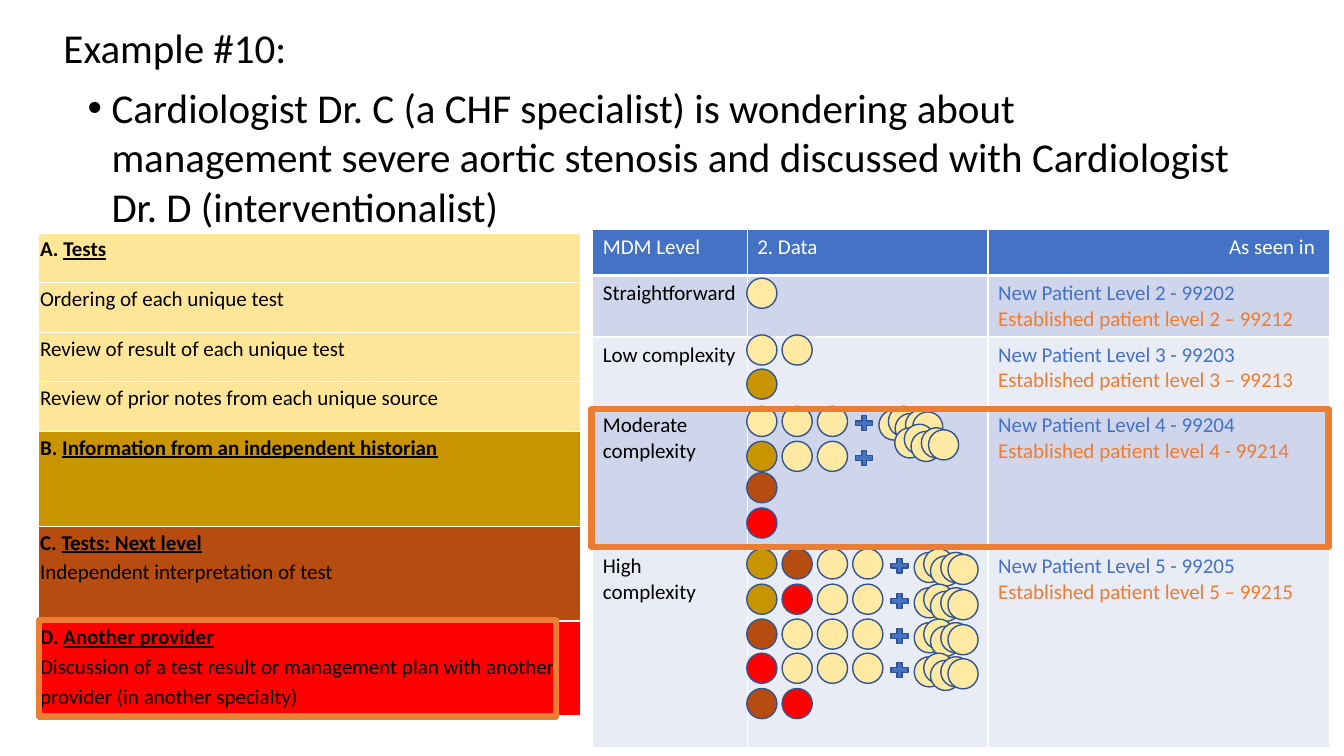
from dataclasses import dataclass

from lxml.etree import SubElement
from pptx import Presentation
from pptx.dml.color import RGBColor
from pptx.enum.shapes import MSO_SHAPE as Preset
from pptx.enum.text import MSO_ANCHOR as Anchor, MSO_AUTO_SIZE as AutoSize, PP_ALIGN as Align
from pptx.oxml.ns import qn
from pptx.util import Cm, Pt


@dataclass(frozen=True)
class Theme:
    font: str = "Calibri"
    title_size: float = 29.3
    table_size: float = 15
    black: str = "000000"
    white: str = "FFFFFF"
    blue: str = "4472C4"
    outline: str = "325491"
    orange: str = "ED7D31"
    band_dark: str = "CFD5EA"
    band_light: str = "E9EBF5"
    tests_row: str = "FFE699"
    tests: str = "FFE9A3"
    historian: str = "C89400"
    next_level: str = "B74C11"
    provider: str = "FF0000"


THEME = Theme()

TITLE = "Example #10:"
CASE = (
    "Cardiologist Dr. C (a CHF specialist) is wondering about management severe aortic "
    "stenosis and discussed with Cardiologist Dr. D (interventionalist)"
)

CATEGORIES = [
    ("A. ", "Tests", "", THEME.tests_row, 1.25),
    ("", "", "Ordering of each unique test", THEME.tests_row, 1.25),
    ("", "", "Review of result of each unique test", THEME.tests_row, 1.25),
    ("", "", "Review of prior notes from each unique source", THEME.tests_row, 1.25),
    ("B. ", "Information from an independent historian", "", THEME.historian, 2.39),
    ("C. ", "Tests: Next level", "Independent interpretation of test", THEME.next_level, 2.39),
    ("D. ", "Another provider",
     "Discussion of a test result or management plan with another provider (in another specialty)",
     THEME.provider, 2.39),
]

HEADERS = ["MDM Level", "2. Data", "As seen in "]
LEVELS = [
    ("Straightforward", "New Patient Level 2 - 99202", "Established patient level 2 – 99212", 1.5),
    ("Low complexity", "New Patient Level 3 - 99203", "Established patient level 3 – 99213", 1.78),
    ("Moderate complexity", "New Patient Level 4 - 99204", "Established patient level 4 - 99214", 3.56),
    ("High complexity", "New Patient Level 5 - 99205", "Established patient level 5 – 99215", 5.0),
]
HEADER_HEIGHT = 1.17
LEVEL_WIDTHS = [3.89, 6.07, 8.61]

DOT_FILLS = {"T": THEME.tests, "H": THEME.historian, "N": THEME.next_level, "P": THEME.provider}
DOT_ROWS = [
    (7.01, "T", None),
    (8.44, "TT", None),
    (9.3, "H", None),
    (10.24, "TTT", (0, 0)),
    (11.12, "HTT", (0.4, -0.43)),
    (11.91, "N", None),
    (12.8, "P", None),
    (13.83, "HNTT", (0, 0)),
    (14.72, "HPTT", (0, 0)),
    (15.6, "NTTT", (0, 0)),
    (16.46, "PTTT", (0, 0)),
    (17.35, "NP", None),
]
DOT_LEFT, DOT_PITCH, DOT_SIZE = 18.82, 0.89, 0.76
PLUS_DROP, PLUS_WIDTH, PLUS_HEIGHT = 0.17, 0.58, 0.51
CLUSTER_GAP = 0.66
CLUSTER = [(0, 0.09), (0.24, 0), (0.41, 0.18), (0.67, 0.09), (0.85, 0.14)]

FRAMES = [(14.91, 10.31, 18.57, 3.48), (0.99, 15.62, 13.03, 2.44)]


def color(value):
    return RGBColor.from_string(value)


def style(span, size, ink, bold=False, underline=False):
    font = span.font
    font.name, font.size, font.bold, font.underline = THEME.font, Pt(size), bold, underline
    font.color.rgb = color(ink)


def write(para, text, ink, size=THEME.table_size):
    para.text = text
    for span in para.runs:
        style(span, size, ink)


def paint_cell(cell, fill, bottom=1):
    cell.fill.solid()
    cell.fill.fore_color.rgb = color(fill)
    props = cell._tc.get_or_add_tcPr()
    for index, (side, width) in enumerate((("lnL", 1), ("lnR", 1), ("lnT", 1), ("lnB", bottom))):
        border = SubElement(props, qn(f"a:{side}"), w=str(Pt(width)))
        SubElement(SubElement(border, qn("a:solidFill")), qn("a:srgbClr"), val=THEME.white)
        props.insert(index, border)


def add_grid(page, left, top, widths, heights):
    frame = page.shapes.add_table(len(heights), len(widths), Cm(left), Cm(top),
                                  Cm(sum(widths)), Cm(sum(heights)))
    table = frame.table
    for column, width in zip(table.columns, widths):
        column.width = Cm(width)
    for row, height in zip(table.rows, heights):
        row.height = Cm(height)
    return table


def add_shape(shapes, preset, left, top, width, height, fill, line, weight):
    shape = shapes.add_shape(preset, Cm(left), Cm(top), Cm(width), Cm(height))
    shape.shadow.inherit = False
    if fill:
        shape.fill.solid()
        shape.fill.fore_color.rgb = color(fill)
    else:
        shape.fill.background()
    shape.line.color.rgb = color(line)
    shape.line.width = Pt(weight)


def add_dot(shapes, left, top, fill):
    add_shape(shapes, Preset.FLOWCHART_CONNECTOR, left, top, DOT_SIZE, DOT_SIZE,
              fill, THEME.outline, 1)


def add_title(page):
    box = page.shapes.title
    box.left, box.top, box.width, box.height = Cm(1.27), Cm(2.24), Cm(30.35), Cm(1.9)
    frame = box.text_frame
    frame.auto_size, frame.word_wrap = AutoSize.NONE, True
    frame.vertical_anchor = Anchor.MIDDLE
    frame.margin_left = frame.margin_right = Cm(0.33)
    frame.margin_top = frame.margin_bottom = Cm(0.18)
    heading, case = frame.paragraphs[0], frame.add_paragraph()
    for para, text in ((heading, TITLE), (case, CASE)):
        write(para, text, THEME.black, THEME.title_size)
        para.alignment, para.line_spacing = Align.LEFT, 1.0
        para.space_before, para.space_after = Pt(0), Pt(7.5)
    case.level = 1
    props = case._p.get_or_add_pPr()
    props.set("marL", str(Cm(1.21)))
    props.set("indent", str(Cm(-0.6)))
    SubElement(props, qn("a:buFont"), typeface="Arial")
    SubElement(props, qn("a:buChar"), char="•")


def add_categories(page):
    table = add_grid(page, 0.98, 5.87, [13.64], [entry[-1] for entry in CATEGORIES])
    for row, (letter, name, detail, fill, _) in enumerate(CATEGORIES):
        cell = table.cell(row, 0)
        paint_cell(cell, fill)
        cell.margin_left = cell.margin_right = Cm(0.03)
        cell.margin_top = cell.margin_bottom = 0
        frame = cell.text_frame
        para = frame.paragraphs[0]
        if name:
            for text, underline in ((letter, False), (name, True)):
                span = para.add_run()
                span.text = text
                style(span, THEME.table_size, THEME.black, True, underline)
        if detail:
            write(frame.add_paragraph() if name else para, detail, THEME.black)
        for para in frame.paragraphs:
            para.line_spacing = 1.15


def add_levels(page):
    heights = [HEADER_HEIGHT] + [entry[-1] for entry in LEVELS]
    table = add_grid(page, 14.94, 5.77, LEVEL_WIDTHS, heights)
    for column, header in enumerate(HEADERS):
        cell = table.cell(0, column)
        paint_cell(cell, THEME.blue, 3)
        write(cell.text_frame.paragraphs[0], header, THEME.white)
    table.cell(0, 2).text_frame.paragraphs[0].alignment = Align.RIGHT
    for row, (level, new, established, _) in enumerate(LEVELS, 1):
        for column in range(len(HEADERS)):
            paint_cell(table.cell(row, column), THEME.band_dark if row % 2 else THEME.band_light)
        write(table.cell(row, 0).text_frame.paragraphs[0], level, THEME.black)
        codes = table.cell(row, 2).text_frame
        write(codes.paragraphs[0], new, THEME.blue)
        write(codes.add_paragraph(), established, THEME.orange)


def add_dots(page):
    for top, dots, nudge in DOT_ROWS:
        for index, kind in enumerate(dots):
            add_dot(page.shapes, DOT_LEFT + index * DOT_PITCH, top, DOT_FILLS[kind])
        if nudge:
            plus_left = DOT_LEFT + len(dots) * DOT_PITCH
            add_shape(page.shapes, Preset.MATH_PLUS, plus_left, top + PLUS_DROP,
                      PLUS_WIDTH, PLUS_HEIGHT, THEME.blue, THEME.outline, 1)
            cluster = page.shapes.add_group_shape()
            for across, down in CLUSTER:
                add_dot(cluster.shapes, plus_left + CLUSTER_GAP + nudge[0] + across,
                        top + nudge[1] + down, THEME.tests)


def main():
    deck = Presentation()
    deck.slide_width, deck.slide_height = Cm(33.87), Cm(19.05)
    page = deck.slides.add_slide(deck.slide_layouts[5])
    add_title(page)
    add_categories(page)
    add_levels(page)
    add_dots(page)
    for place in FRAMES:
        add_shape(page.shapes, Preset.RECTANGLE, *place, None, THEME.orange, 4.5)
    deck.save("out.pptx")


if __name__ == "__main__":
    main()
